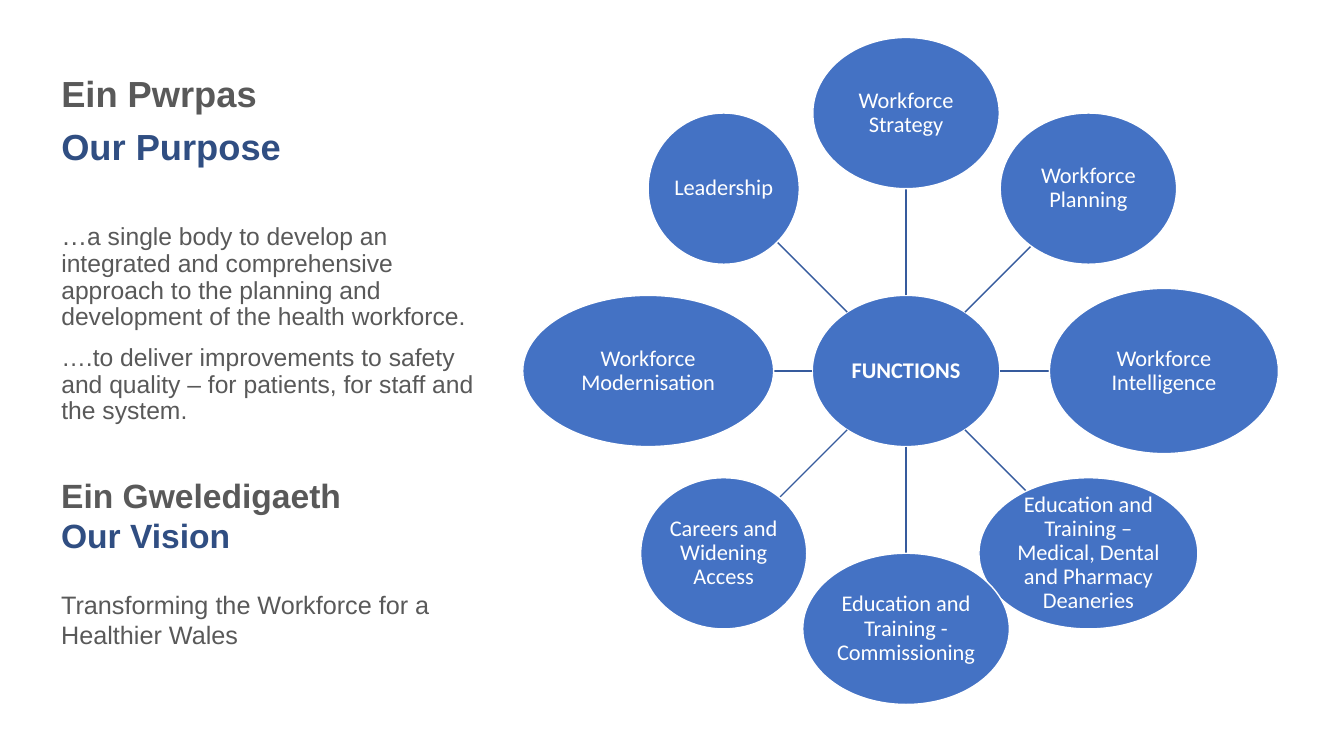
from math import cos, hypot, radians, sin

from lxml import etree
from pptx import Presentation
from pptx.dml.color import RGBColor
from pptx.enum.shapes import MSO_CONNECTOR, MSO_SHAPE
from pptx.enum.text import MSO_ANCHOR, MSO_AUTO_SIZE, PP_ALIGN
from pptx.oxml.ns import qn
from pptx.util import Pt

OVAL = MSO_SHAPE.OVAL
STRAIGHT = MSO_CONNECTOR.STRAIGHT
MIDDLE, TOP = MSO_ANCHOR.MIDDLE, MSO_ANCHOR.TOP
CENTER = PP_ALIGN.CENTER
NO_AUTOFIT = MSO_AUTO_SIZE.NONE

WHITE = RGBColor(0xFF, 0xFF, 0xFF)
BLUE = RGBColor(0x44, 0x72, 0xC4)
SPOKE_BLUE = RGBColor(0x36, 0x5B, 0x9D)
NAVY = RGBColor(0x30, 0x4E, 0x82)
GREY = RGBColor(0x59, 0x59, 0x59)

HUB_X, HUB_Y = 647.2, 265
HUB_SIZE = (134, 108)
WHEEL_RADIUS = 184.2

# Clockwise from the top: label, width, height
FUNCTIONS = [
    ("Workforce Strategy", 133.2, 108),
    ("Workforce Planning", 126, 108),
    ("Workforce Intelligence", 163.6, 118),
    ("Education and Training – Medical, Dental and Pharmacy Deaneries", 156.4, 108),
    ("Education and Training - Commissioning", 147.6, 108),
    ("Careers and Widening Access", 118.6, 108),
    ("Workforce Modernisation", 179.2, 108),
    ("Leadership", 108, 108),
]

# Paragraphs: space before, bold, colour, runs of (text, size)
PURPOSE = [
    (0, True, GREY, [("Ein Pwrpas", 25.9)]),
    (10, True, NAVY, [("Our Purpose", 25.9)]),
    (39, False, GREY, [
        ("…", 18.5),
        ("a single body to develop an integrated and comprehensive approach "
         "to the planning and development of the health workforce.", 17.6)]),
    (10, False, GREY, [
        ("….to deliver improvements to safety and quality – for patients, "
         "for staff and the system.", 17.6)]),
]
VISION = [
    (0, True, GREY, [("Ein Gweledigaeth", 24)]),
    (0, True, NAVY, [("Our Vision", 24)]),
    (24, False, GREY, [("Transforming the Workforce for a Healthier Wales", 18)]),
]


def edge_distance(width, height, angle):
    """Distance from an ellipse's centre to its edge along the angle."""
    return 1 / hypot(cos(angle) / (width / 2), sin(angle) / (height / 2))


class Deck:
    text_font = "Arial"
    wheel_font = "Calibri"
    wheel_size = 16

    def __init__(self, prs):
        self.slide = prs.slides.add_slide(prs.slide_layouts[1])
        title = self.slide.shapes.title
        title.element.getparent().remove(title.element)

    def run(self, p, text, font, size, color, bold):
        r = p.add_run()
        r.text = text
        r.font.name = font
        r.font.size = Pt(size)
        r.font.bold = bold
        r.font.color.rgb = color

    def paragraphs(self, tf, items, line_spacing):
        tf.word_wrap = True
        tf.auto_size = NO_AUTOFIT
        tf.vertical_anchor = TOP
        for i, (before, bold, color, runs) in enumerate(items):
            p = tf.paragraphs[0] if i == 0 else tf.add_paragraph()
            pPr = p._p.get_or_add_pPr()
            pPr.set("marL", "0")
            pPr.set("indent", "0")
            etree.SubElement(pPr, qn("a:buNone"))
            p.space_before = Pt(before)
            p.line_spacing = line_spacing
            for text, size in runs:
                self.run(p, text, self.text_font, size, color, bold)

    def body(self, x, y, w, h, items):
        sp = self.slide.placeholders[1]
        sp.left, sp.top, sp.width, sp.height = Pt(x), Pt(y), Pt(w), Pt(h)
        self.paragraphs(sp.text_frame, items, 0.9)

    def text_box(self, x, y, w, h, items):
        sp = self.slide.shapes.add_textbox(Pt(x), Pt(y), Pt(w), Pt(h))
        self.paragraphs(sp.text_frame, items, 1.0)

    def ellipse(self, cx, cy, w, h, label, bold=False):
        sp = self.slide.shapes.add_shape(
            OVAL, Pt(cx - w / 2), Pt(cy - h / 2), Pt(w), Pt(h))
        sp.shadow.inherit = False
        sp.fill.solid()
        sp.fill.fore_color.rgb = BLUE
        sp.line.color.rgb = WHITE
        sp.line.width = Pt(1)
        tf = sp.text_frame
        tf.word_wrap = True
        tf.vertical_anchor = MIDDLE
        tf.margin_left = tf.margin_right = Pt(0.72)
        tf.margin_top = tf.margin_bottom = Pt(0.72)
        p = tf.paragraphs[0]
        p.alignment = CENTER
        p.line_spacing = 0.9
        self.run(p, label, self.wheel_font, self.wheel_size, WHITE, bold)

    def line(self, x1, y1, x2, y2):
        cxn = self.slide.shapes.add_connector(
            STRAIGHT, Pt(x1), Pt(y1), Pt(x2), Pt(y2))
        cxn.line.color.rgb = SPOKE_BLUE
        cxn.line.width = Pt(1)
        etree.SubElement(cxn._element.spPr, qn("a:effectLst"))

    def wheel(self):
        self.ellipse(HUB_X, HUB_Y, *HUB_SIZE, "FUNCTIONS", bold=True)
        for i, (label, w, h) in enumerate(FUNCTIONS):
            angle = radians(i * 360 / len(FUNCTIONS) - 90)
            start = edge_distance(*HUB_SIZE, angle)
            end = WHEEL_RADIUS - edge_distance(w, h, angle)
            (x1, y1), (x2, y2), (cx, cy) = [
                (HUB_X + d * cos(angle), HUB_Y + d * sin(angle))
                for d in (start, end, WHEEL_RADIUS)]
            self.line(x1, y1, x2, y2)
            self.ellipse(cx, cy, w, h, label)


def main():
    prs = Presentation()
    prs.slide_width, prs.slide_height = Pt(960), Pt(540)
    deck = Deck(prs)
    deck.wheel()
    deck.body(36.6, 51, 309.6, 260, PURPOSE)
    deck.text_box(36.6, 335.6, 316.8, 138, VISION)
    prs.save("out.pptx")


if __name__ == "__main__":
    main()
